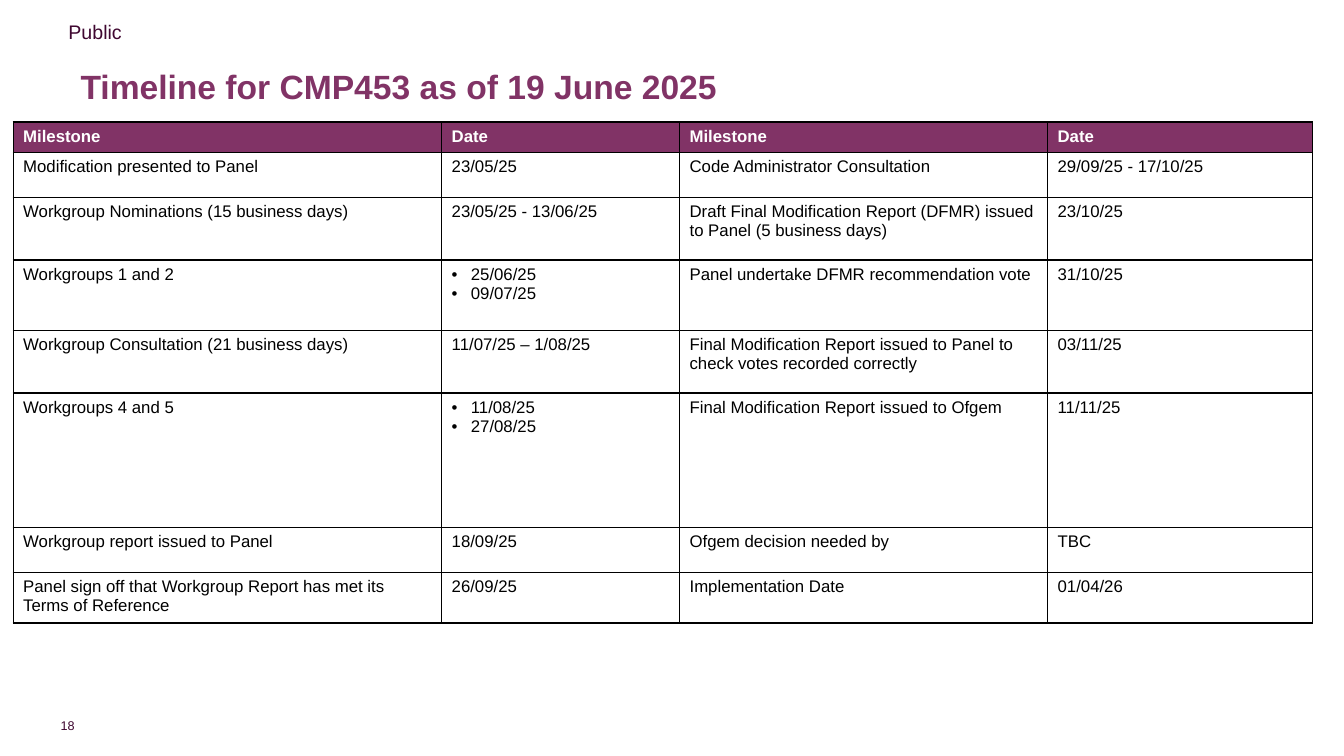
from lxml import etree
from pptx import Presentation
from pptx.dml.color import RGBColor
from pptx.enum.text import MSO_ANCHOR, PP_ALIGN
from pptx.oxml.ns import qn
from pptx.util import Inches, Pt

TOP, MIDDLE = MSO_ANCHOR.TOP, MSO_ANCHOR.MIDDLE
LEFT, RIGHT = PP_ALIGN.LEFT, PP_ALIGN.RIGHT

COLUMN_WIDTHS = [4.25, 2.36, 3.65, 2.63]
ROW_HEIGHTS = [0.27, 0.45, 0.62, 0.7, 0.62, 1.33, 0.45, 0.49]
MILESTONES = [
    ["Milestone", "Date", "Milestone", "Date"],
    ["Modification presented to Panel", "23/05/25",
     "Code Administrator Consultation", "29/09/25 - 17/10/25"],
    ["Workgroup Nominations (15 business days)", "23/05/25 - 13/06/25",
     "Draft Final Modification Report (DFMR) issued to Panel (5 business days)", "23/10/25"],
    ["Workgroups 1 and 2", ["25/06/25", "09/07/25"],
     "Panel undertake DFMR recommendation vote", "31/10/25"],
    ["Workgroup Consultation (21 business days)", "11/07/25 – 1/08/25",
     "Final Modification Report issued to Panel to check votes recorded correctly", "03/11/25"],
    ["Workgroups 4 and 5", ["11/08/25", "27/08/25"],
     "Final Modification Report issued to Ofgem", "11/11/25"],
    ["Workgroup report issued to Panel", "18/09/25", "Ofgem decision needed by", "TBC"],
    ["Panel sign off that Workgroup Report has met its Terms of Reference", "26/09/25",
     "Implementation Date", "01/04/26"],
]


def color(value):
    """Turn a hex string into a colour."""
    return RGBColor.from_string(value)


def write(frame, text, size=12, ink="000000", bold=False, align=LEFT, spacing=None, after=None):
    """Write a string as one paragraph, or a list as bulleted paragraphs."""
    bulleted = isinstance(text, list)
    for index, line in enumerate(text if bulleted else [text]):
        para = frame.paragraphs[0] if index == 0 else frame.add_paragraph()
        if bulleted:
            properties = para._p.get_or_add_pPr()
            properties.set("marL", str(Inches(0.19)))
            properties.set("indent", str(-Inches(0.19)))
            etree.SubElement(properties, qn("a:buFont"), typeface="Arial")
            etree.SubElement(properties, qn("a:buChar"), char="•")
        para.alignment = align
        if spacing:
            para.line_spacing = spacing
        if after:
            para.space_after = Pt(after)
        span = para.add_run()
        span.text = line
        span.font.name = "Arial"
        span.font.size = Pt(size)
        span.font.bold = bold
        span.font.color.rgb = color(ink)


class TimelinePage:
    """Hold the style and the current slide."""

    plum = "813366"
    dark = "3F0730"
    rule = "000000"

    def __init__(self, deck):
        """Add a blank page to the deck."""
        self.page = deck.slides.add_slide(deck.slide_layouts[6])

    def text(self, place, text, anchor=TOP, wrap=True, inset=True, **style):
        """Add a text box."""
        box = self.page.shapes.add_textbox(*map(Inches, place))
        frame = box.text_frame
        frame.word_wrap = wrap
        frame.vertical_anchor = anchor
        if not inset:
            frame.margin_left = frame.margin_right = Inches(0)
            frame.margin_top = frame.margin_bottom = Inches(0)
        write(frame, text, **style)

    def border(self, cell):
        """Draw a thin line on all four sides of a cell."""
        properties = cell._tc.get_or_add_tcPr()
        for index, side in enumerate(["a:lnL", "a:lnR", "a:lnT", "a:lnB"]):
            line = etree.Element(qn(side), w=str(Pt(1)))
            fill = etree.SubElement(line, qn("a:solidFill"))
            etree.SubElement(fill, qn("a:srgbClr"), val=self.rule)
            properties.insert(index, line)

    def table(self, left, top, widths, heights, rows):
        """Add a bordered table with a coloured header row."""
        size = map(Inches, (left, top, sum(widths), sum(heights)))
        table = self.page.shapes.add_table(len(rows), len(widths), *size).table
        table.horz_banding = False
        for column, width in zip(table.columns, widths):
            column.width = Inches(width)
        for number, (row, height, texts) in enumerate(zip(table.rows, heights, rows)):
            row.height = Inches(height)
            header = number == 0
            for cell, text in zip(row.cells, texts):
                if header:
                    cell.fill.solid()
                    cell.fill.fore_color.rgb = color(self.plum)
                else:
                    cell.fill.background()
                self.border(cell)
                write(cell.text_frame, text, bold=header, ink="FFFFFF" if header else "000000")


def main():
    """Build the timeline slide."""
    deck = Presentation()
    deck.slide_width, deck.slide_height = Inches(13.33), Inches(7.5)
    page = TimelinePage(deck)
    page.text((0.59, 7.12, 0.15, 0.15), "18", anchor=MIDDLE, wrap=False, inset=False,
              size=9, ink=page.dark, align=RIGHT, after=12)
    page.text((0.58, 0.15, 5, 0.34), "Public", size=14, ink=page.dark)
    page.text((0.7, 0.4, 10.62, 0.95), "Timeline for CMP453 as of 19 June 2025",
              anchor=MIDDLE, size=24, ink=page.plum, bold=True, spacing=0.9)
    page.table(0.13, 1.21, COLUMN_WIDTHS, ROW_HEIGHTS, MILESTONES)
    deck.save("out.pptx")


if __name__ == "__main__":
    main()
